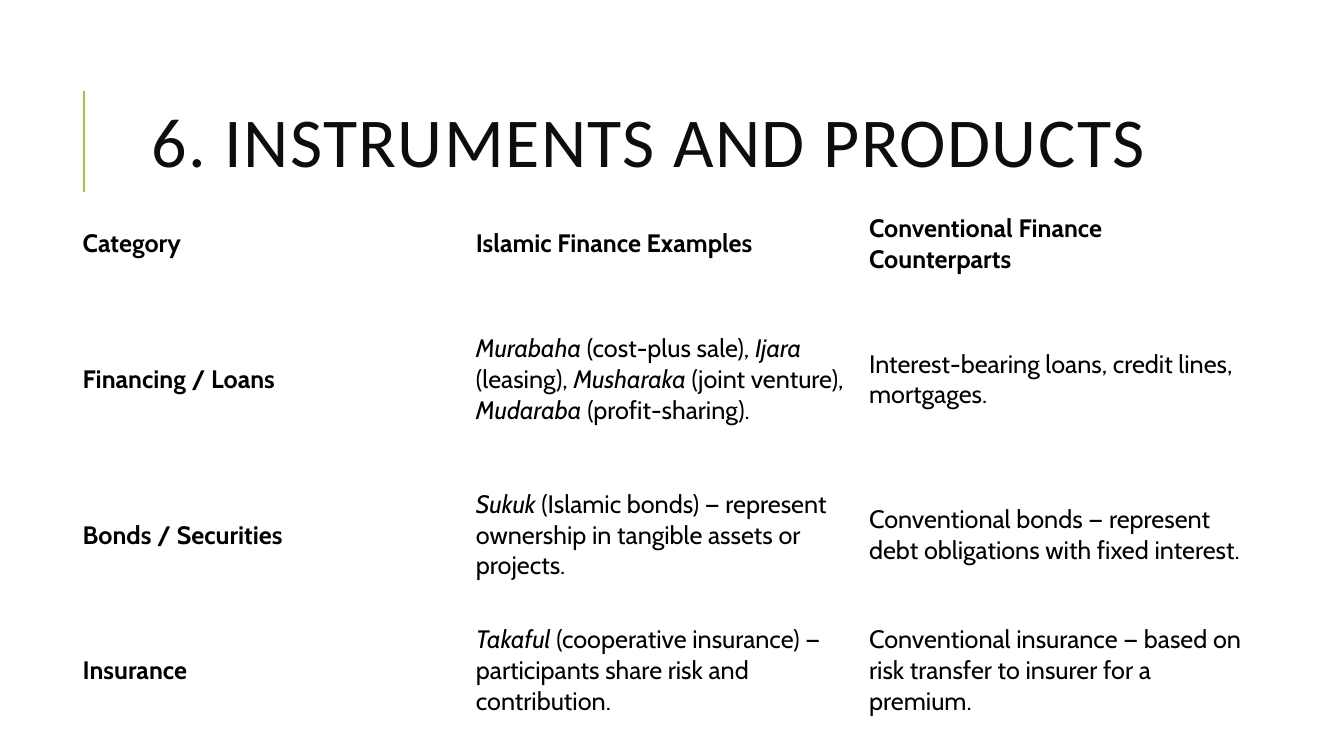
"""Build the slide on Islamic finance instruments and their conventional counterparts."""
import dataclasses

import pptx
import pptx.dml.color
import pptx.enum.shapes
import pptx.enum.text
import pptx.oxml.ns
import pptx.util
from lxml import etree

EMU_PER_PX = 9144
BLACK = "000000"


@dataclasses.dataclass(frozen=True)
class Instrument:
    """One table row; asterisks enclose italic terms."""
    category: str
    islamic: str
    conventional: str
    height: int
    heading: bool = False


INSTRUMENTS = [
    Instrument("Category", "Islamic Finance Examples",
               "Conventional Finance Counterparts", 94, heading=True),
    Instrument("Financing / Loans",
               "*Murabaha* (cost-plus sale), *Ijara* (leasing), "
               "*Musharaka* (joint venture), *Mudaraba* (profit-sharing).",
               "Interest-bearing loans, credit lines, mortgages.", 175),
    Instrument("Bonds / Securities",
               "*Sukuk* (Islamic bonds) — represent ownership in tangible assets or projects.",
               "Conventional bonds — represent debt obligations with fixed interest.", 134),
    Instrument("Insurance",
               "*Takaful* (cooperative insurance) — participants share risk and contribution.",
               "Conventional insurance — based on risk transfer to insurer for a premium.", 134),
]


def px(length: int) -> pptx.util.Emu:
    """Turn px into EMU."""
    return pptx.util.Emu(length * EMU_PER_PX)


def color(value: str) -> pptx.dml.color.RGBColor:
    """Turn a hex string into a colour."""
    return pptx.dml.color.RGBColor.from_string(value)


def write(frame, text: str, *, font: str, size: int, fill: str = BLACK,
          bold: bool = False, tracking: int = 0, line_spacing: float | None = None,
          align=pptx.enum.text.PP_ALIGN.LEFT) -> None:
    """Write one paragraph, with the terms between asterisks in italics."""
    frame.word_wrap = True
    paragraph = frame.paragraphs[0]
    paragraph.alignment = align
    paragraph.line_spacing = line_spacing
    for index, part in enumerate(text.split("*")):
        if not part:
            continue
        run = paragraph.add_run()
        run.text = part
        run.font.name = font
        run.font.size = pptx.util.Pt(size)
        run.font.bold = bold
        run.font.italic = index % 2 == 1
        run.font.color.rgb = color(fill)
        if tracking:
            run.font._element.set("spc", str(tracking * 100))


def add_accent(slide) -> None:
    """Draw the green line beside the title."""
    accent = slide.shapes.add_connector(
        pptx.enum.shapes.MSO_CONNECTOR.STRAIGHT, px(83), px(190), px(83), px(90))
    accent.line.color.rgb = color("99CB38")
    accent.line.width = pptx.util.Pt(1.5)
    etree.SubElement(accent._element.spPr, pptx.oxml.ns.qn("a:effectLst"))


def add_title(slide) -> None:
    """Add the slide title."""
    title = slide.shapes.add_textbox(px(112), px(64), px(1063), px(164)).text_frame
    title.vertical_anchor = pptx.enum.text.MSO_ANCHOR.MIDDLE
    write(title, "6. INSTRUMENTS AND PRODUCTS", font="Calibri", size=50, fill="0D0D0D",
          tracking=1, line_spacing=0.8, align=pptx.enum.text.PP_ALIGN.CENTER)


def add_instruments(slide, instruments: list[Instrument]) -> None:
    """Add the comparison table."""
    height = sum(instrument.height for instrument in instruments)
    table = slide.shapes.add_table(
        len(instruments), 3, px(72), px(195), px(1170), px(height)).table
    table.first_row = table.horz_banding = False
    for column in table.columns:
        column.width = px(390)
    for row, instrument in zip(table.rows, instruments):
        row.height = px(instrument.height)
        texts = (instrument.category, instrument.islamic, instrument.conventional)
        for index, (cell, text) in enumerate(zip(row.cells, texts)):
            cell.fill.background()
            cell.vertical_anchor = pptx.enum.text.MSO_ANCHOR.MIDDLE
            write(cell.text_frame, text, font="Cabin", size=18,
                  bold=instrument.heading or index == 0)


def main() -> None:
    """Build and save the presentation."""
    presentation = pptx.Presentation()
    presentation.slide_width, presentation.slide_height = px(1333), px(750)
    slide = presentation.slides.add_slide(presentation.slide_layouts[6])
    add_accent(slide)
    add_title(slide)
    add_instruments(slide, INSTRUMENTS)
    presentation.save("out.pptx")


if __name__ == "__main__":
    main()
